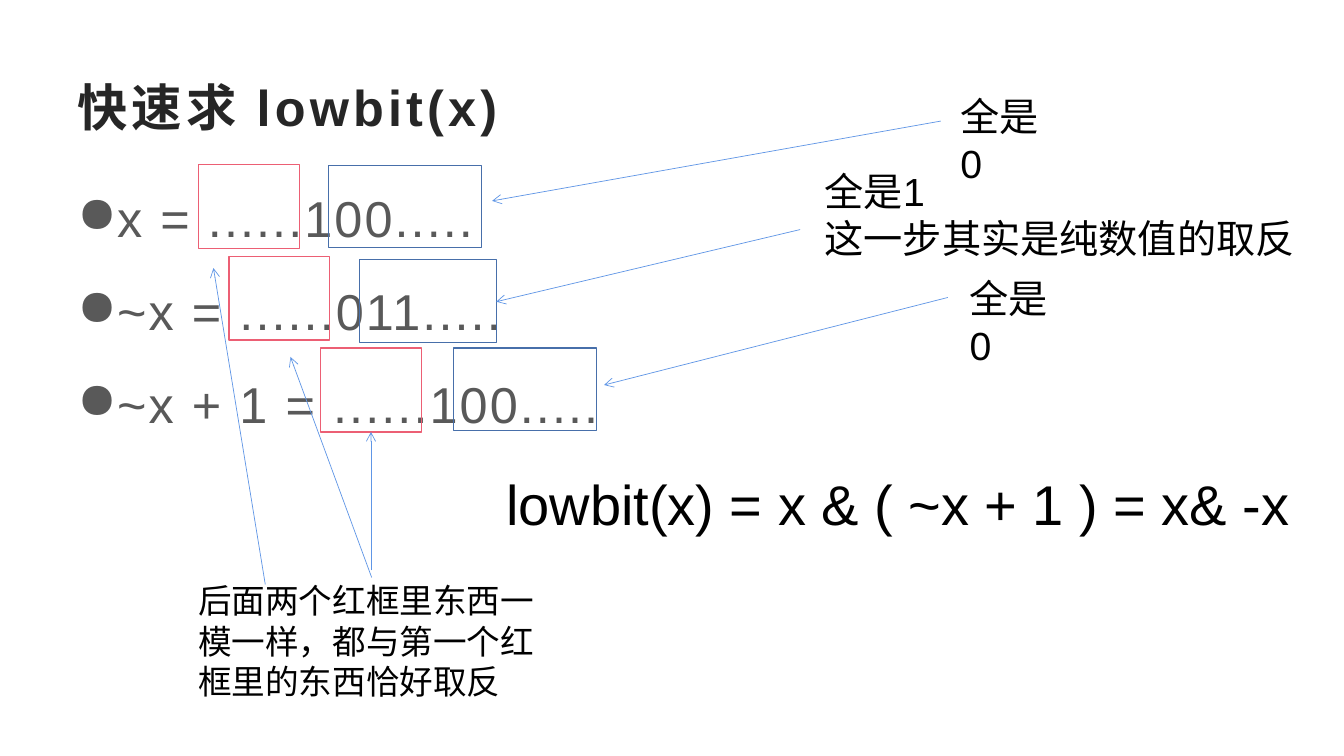
from lxml import etree
from pptx import Presentation
from pptx.dml.color import RGBColor
from pptx.enum.shapes import MSO_CONNECTOR, MSO_SHAPE
from pptx.enum.text import MSO_ANCHOR, MSO_AUTO_SIZE, PP_ALIGN
from pptx.oxml.ns import qn
from pptx.util import Pt

STRAIGHT = MSO_CONNECTOR.STRAIGHT
RECTANGLE = MSO_SHAPE.RECTANGLE
MIDDLE = MSO_ANCHOR.MIDDLE
NO_AUTOFIT = MSO_AUTO_SIZE.NONE
LEFT = PP_ALIGN.LEFT

FONT = "Arial"
COLORS = {
    "title": "262626",
    "body": "595959",
    "note": "000000",
    "red": "EC5F74",
    "blue": "476FAA",
    "arrow": "6096E6",
}


def color(name):
    return RGBColor.from_string(COLORS[name])


def place(shape, box):
    shape.left, shape.top, shape.width, shape.height = map(Pt, box)


def style(paragraph, size, color_name, bold=False, tracking=0):
    paragraph.alignment = LEFT
    font = paragraph.font
    font.name, font.size, font.bold = FONT, Pt(size), bold
    font.color.rgb = color(color_name)
    if tracking:
        for run in paragraph.runs:
            run._r.get_or_add_rPr().set("spc", str(int(tracking * 100)))


def add_title(slide, box, text):
    title = slide.shapes.title
    place(title, box)
    frame = title.text_frame
    frame.text = text
    frame.auto_size = NO_AUTOFIT
    frame.vertical_anchor = MIDDLE
    style(frame.paragraphs[0], 36, "title", bold=True, tracking=3)


def add_text(slide, box, lines, size, color_name="note", tracking=0):
    frame = slide.shapes.add_textbox(*map(Pt, box)).text_frame
    frame.word_wrap = True
    frame.text = "\n".join(lines)
    for paragraph in frame.paragraphs:
        style(paragraph, size, color_name, tracking=tracking)
    return frame


def add_bit_patterns(slide, box, lines):
    frame = add_text(slide, box, lines, 36, "body", tracking=1.5)
    for paragraph in frame.paragraphs:
        paragraph.line_spacing = 1.3
        paragraph.space_after = Pt(10)
        properties = paragraph._p.get_or_add_pPr()
        properties.set("marL", str(Pt(18)))
        properties.set("indent", str(-Pt(18)))
        bullet = etree.Element(qn("a:buChar"), char="●")
        properties.find(qn("a:spcAft")).addnext(bullet)


def add_frame(slide, box, color_name):
    frame = slide.shapes.add_shape(RECTANGLE, *map(Pt, box))
    frame.shadow.inherit = False
    frame.fill.background()
    frame.line.color.rgb = color(color_name)
    frame.line.width = Pt(1)


def add_arrow(slide, start, end):
    arrow = slide.shapes.add_connector(STRAIGHT, *map(Pt, start + end))
    arrow.line.color.rgb = color("arrow")
    arrow.line.width = Pt(0.5)
    etree.SubElement(arrow.line._get_or_add_ln(), qn("a:tailEnd"), type="arrow")
    etree.SubElement(arrow._element.spPr, qn("a:effectLst"))


def add_high_bits(slide):
    """Red frames around the high bits, with their shared note."""
    for left, top in ((142, 117.5), (163.5, 183), (229, 248.5)):
        add_frame(slide, (left, top, 72, 60), "red")
    for start, end in (
        ((189.5, 417.5), (152.5, 191.5)),
        ((265.5, 412.5), (207.5, 255)),
        ((265, 407.5), (265, 308.5)),
    ):
        add_arrow(slide, start, end)
    note = "后面两个红框里东西一模一样，都与第一个红框里的东西恰好取反"
    add_text(slide, (134.5, 411, 271.5, 94.5), [note], 24)


def add_low_bits(slide):
    """Blue frames around the low bits, each with an arrow and a note."""
    zeros = ["全是0"]
    ones = ["全是1", "这一步其实是纯数值的取反"]
    for frame, start, end, note_box, note in (
        ((234.5, 118, 109.5, 59), (672, 86.5), (351.5, 143.5),
         (679, 62.5, 85.5, 41), zeros),
        ((257, 185.5, 97.5, 59), (571.5, 164), (354.5, 215.5),
         (582, 116, 378, 75), ones),
        ((324, 248.5, 102, 59), (677, 212.5), (431.5, 275),
         (685.5, 192.5, 85.5, 41), zeros),
    ):
        add_frame(slide, frame, "blue")
        add_arrow(slide, start, end)
        add_text(slide, note_box, note, 28)


def main():
    deck = Presentation()
    deck.slide_width, deck.slide_height = Pt(960), Pt(540)
    slide = deck.slides.add_slide(deck.slide_layouts[5])

    add_title(slide, (48, 48, 864, 55.5), "快速求 lowbit(x)")
    add_bit_patterns(
        slide, (48, 117.5, 864, 374.5),
        ["x = ......100.....", "~x = ......011.....", "~x + 1 = ......100....."])
    add_high_bits(slide)
    add_low_bits(slide)

    # Resulting formula
    add_text(slide, (354.5, 332, 605.5, 55.5),
             ["lowbit(x) = x & ( ~x + 1 ) = x& -x"], 40)

    deck.save("out.pptx")


if __name__ == "__main__":
    main()
